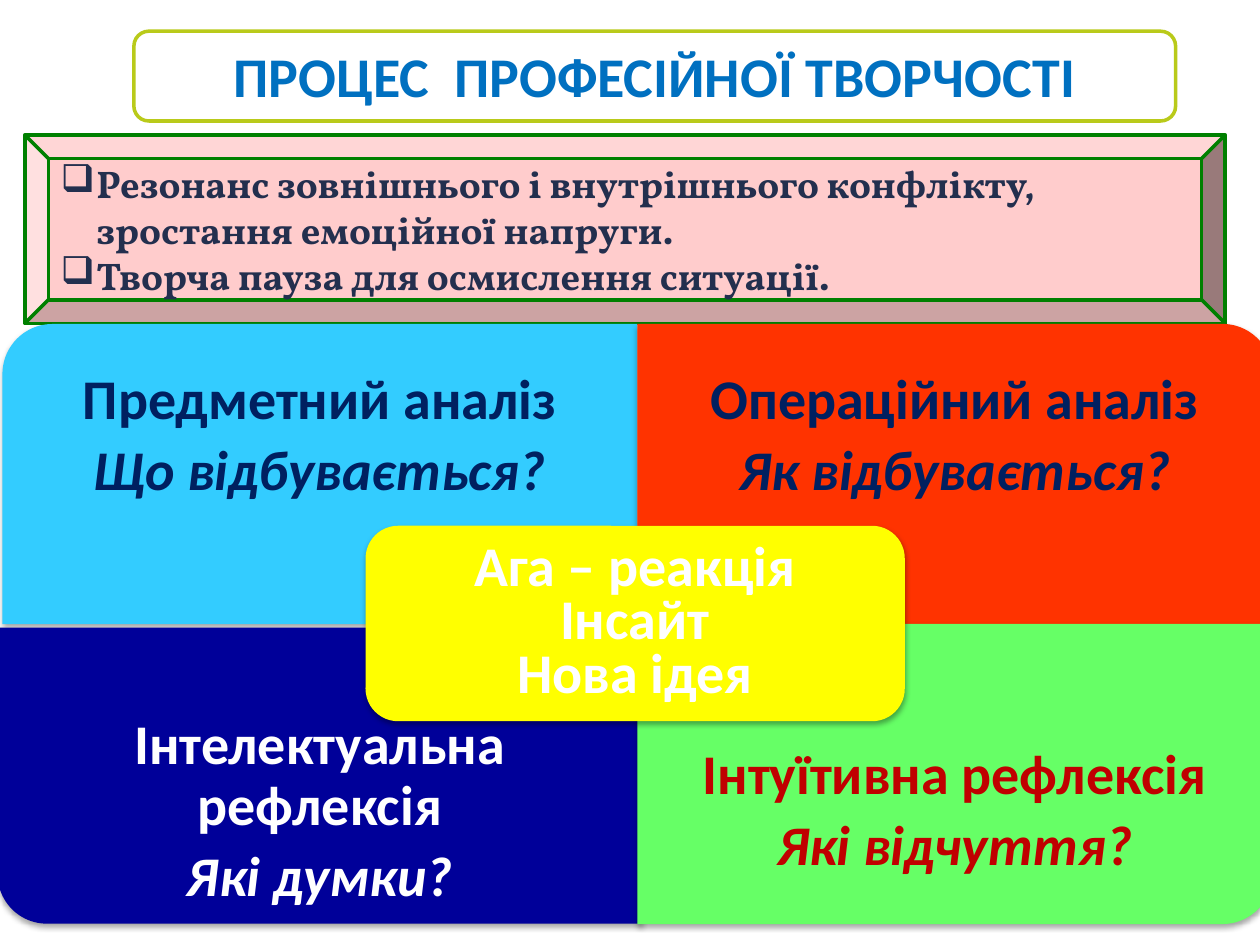
import pptx
import pptx.dml.color
import pptx.enum.shapes
import pptx.enum.text
import pptx.oxml
import pptx.oxml.ns
import pptx.util

Cm, Pt = pptx.util.Cm, pptx.util.Pt
SHAPE = pptx.enum.shapes.MSO_SHAPE
ALIGN = pptx.enum.text.PP_ALIGN
ANCHOR = pptx.enum.text.MSO_ANCHOR

COLOURS = {
    "white": "FFFFFF", "lime": "B9CA1A", "blue": "0070C0", "pink": "FFCCCC",
    "green": "008000", "slate": "232F4E", "sky": "33CCFF", "navy": "002060",
    "orange": "FF3300", "indigo": "000099", "mint": "66FF66",
    "crimson": "C00000", "yellow": "FFFF00",
}
HEADING = {"name": "Calibri", "size": Pt(32), "bold": True}
BODY = {"name": "Vollkorn", "size": Pt(22), "bold": True}
PANEL_PARA = {"alignment": ALIGN.CENTER, "line_spacing": 0.9, "space_after": Pt(6)}
CORE_PARA = {"alignment": ALIGN.CENTER, "line_spacing": 0.8}
SHADOW = (
    '<a:effectLst %s><a:outerShdw blurRad="39370" dist="22860" dir="5400000" rotWithShape="0">'
    '<a:srgbClr val="000000"><a:alpha val="35000"/></a:srgbClr></a:outerShdw></a:effectLst>'
    % pptx.oxml.ns.nsdecls("a")
)


def apply(target, values):
    """Set every attribute in values on target."""
    for name, value in values.items():
        setattr(target, name, value)


class Painter:
    """Holds the style and the current slide."""

    def __init__(self, page, colours):
        self.page = page
        self.colours = colours

    def colour(self, name):
        """Return the named colour."""
        return pptx.dml.color.RGBColor.from_string(self.colours[name])

    def shape(self, kind, frame, fill, line=None, turn=0, shadow=False):
        """Add a preset shape whose frame is given in centimetres."""
        box = self.page.shapes.add_shape(kind, *map(Cm, frame))
        box.rotation = turn
        box.fill.solid()
        box.fill.fore_color.rgb = self.colour(fill)
        if line:
            box.line.color.rgb = self.colour(line)
            box.line.width = Pt(2)
        else:
            box.line.fill.background()
        box.shadow.inherit = False
        if shadow:
            effects = box._element.spPr.find(pptx.oxml.ns.qn("a:effectLst"))
            effects.getparent().replace(effects, pptx.oxml.parse_xml(SHADOW))
        return box

    def text(self, box, lines, colour, font, para_format, anchor, inset=None):
        """Write (text, italic) lines into a box and return the paragraphs."""
        frame = box.text_frame
        apply(frame, {"word_wrap": True, "vertical_anchor": anchor})
        if inset:
            sides = ("left", "top", "right", "bottom")
            apply(frame, {"margin_" + side: Cm(inset) for side in sides})
        for index, (words, italic) in enumerate(lines):
            para = frame.add_paragraph() if index else frame.paragraphs[0]
            apply(para, para_format)
            span = para.add_run()
            span.text = words
            apply(span.font, font)
            span.font.color.rgb = self.colour(colour)
            if italic:
                span.font.italic = True
        return frame.paragraphs

    def label(self, frame, lines, colour, para_format, inset):
        """Add a centred text box."""
        box = self.page.shapes.add_textbox(*map(Cm, frame))
        self.text(box, lines, colour, HEADING, para_format, ANCHOR.MIDDLE, inset)

    def indent(self, para, margin, bullet=None):
        """Indent a paragraph, hanging it behind a bullet if one is given."""
        props = para._p.get_or_add_pPr()
        props.set("marL", str(Cm(margin)))
        props.set("indent", str(-Cm(margin) if bullet else 0))
        if bullet:
            mark = props.makeelement(pptx.oxml.ns.qn("a:buChar"), {"char": bullet})
            props.append(mark)

    def panel(self, frame, turn, fill, colour, title, question):
        """Add a quadrant with one rounded outer corner and its label."""
        left, top, width, height = frame
        outline = frame
        if turn % 180:
            shift = (width - height) / 2
            outline = (left + shift, top - shift, height, width)
        self.shape(SHAPE.ROUND_1_RECTANGLE, outline, fill, turn=turn, shadow=True)
        drop = height / 4 if turn in (90, 180) else 0
        self.label((left, top + drop, width, height * 0.75),
                   [(title, False), (question, True)], colour, PANEL_PARA, 0.63)


def main():
    """Build the slide and save it."""
    deck = pptx.Presentation()
    apply(deck, {"slide_width": Cm(25.4), "slide_height": Cm(19.05)})
    page = deck.slides.add_slide(deck.slide_layouts[6])
    painter = Painter(page, COLOURS)

    title = painter.shape(SHAPE.ROUNDED_RECTANGLE, (2.7, 0.63, 21, 1.81), "white", "lime")
    painter.text(title, [("ПРОЦЕС  ПРОФЕСІЙНОЇ ТВОРЧОСТІ", False)], "blue", HEADING,
                 {"alignment": ALIGN.CENTER}, ANCHOR.TOP)

    stages = painter.shape(SHAPE.BEVEL, (0.5, 2.72, 24.2, 3.8), "pink", "green")
    paras = painter.text(stages, [
        ("Резонанс зовнішнього і внутрішнього конфлікту,", False),
        ("зростання емоційної напруги.", False),
        ("Творча пауза для осмислення ситуації.", False),
    ], "slate", BODY, {"alignment": ALIGN.JUSTIFY}, ANCHOR.MIDDLE)
    for para, bullet in zip(paras, ("❑", None, "❑")):
        painter.indent(para, 0.72, bullet)

    left, middle, top, centre, width, height = 0.05, 12.85, 6.53, 12.58, 12.8, 6.05
    for panel in (
        ((left, top, width, height), 270, "sky", "navy",
         "Предметний аналіз", "Що відбувається?"),
        ((middle, top, width, height), 0, "orange", "navy",
         "Операційний аналіз", "Як відбувається?"),
        ((-0.05, 12.65, 13, 5.97), 180, "indigo", "white",
         "Інтелектуальна рефлексія", "Які думки?"),
        ((middle, centre, width, height), 90, "mint", "crimson",
         "Інтуїтивна рефлексія", "Які відчуття?"),
    ):
        painter.panel(*panel)

    painter.shape(SHAPE.ROUNDED_RECTANGLE, (7.37, 10.6, 10.87, 3.94), "yellow", shadow=True)
    ideas = [(words, False) for words in ("Ага – реакція", "Інсайт", "Нова ідея")]
    painter.label((7.55, 10.8, 10.5, 3.55), ideas, "white", CORE_PARA, 0.33)
    deck.save("out.pptx")


if __name__ == "__main__":
    main()
